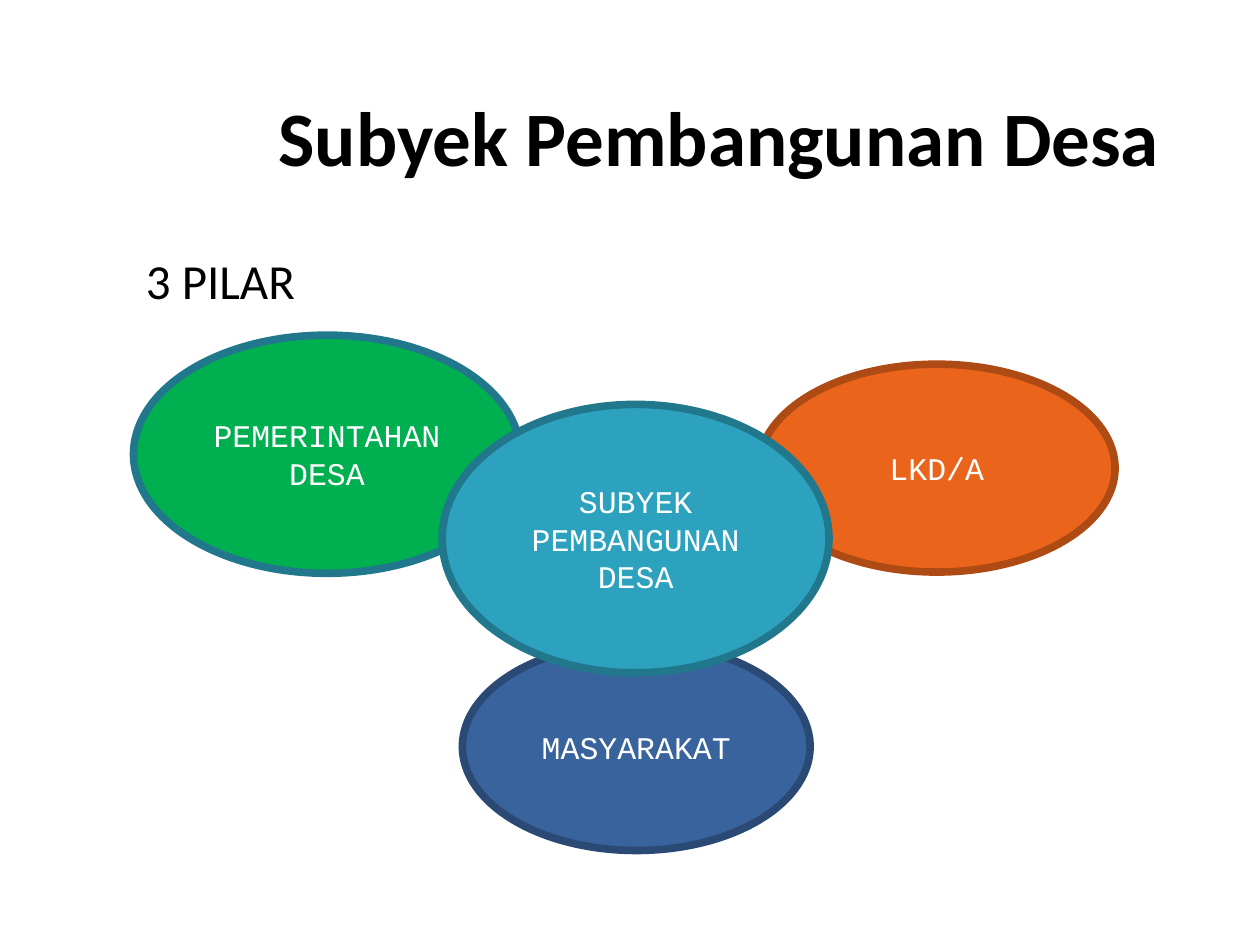
from pptx import Presentation
from pptx.dml.color import RGBColor
from pptx.enum.shapes import MSO_SHAPE
from pptx.enum.text import MSO_ANCHOR, MSO_AUTO_SIZE, PP_ALIGN
from pptx.util import Inches, Pt

OVAL = MSO_SHAPE.OVAL
MIDDLE, TOP = MSO_ANCHOR.MIDDLE, MSO_ANCHOR.TOP
LEFT, CENTER, RIGHT = PP_ALIGN.LEFT, PP_ALIGN.CENTER, PP_ALIGN.RIGHT

BLACK = RGBColor(0x00, 0x00, 0x00)
WHITE = RGBColor(0xFF, 0xFF, 0xFF)
GREEN = RGBColor(0x00, 0xB0, 0x50)
ORANGE = RGBColor(0xEB, 0x64, 0x1B)
RUST = RGBColor(0xAE, 0x4A, 0x14)
BLUE = RGBColor(0x39, 0x63, 0x9D)
NAVY = RGBColor(0x2A, 0x49, 0x74)
TEAL = RGBColor(0x2D, 0xA2, 0xBF)
DEEP = RGBColor(0x21, 0x78, 0x8D)

# Text, box, fill, line; the center comes last to lie on top
OVALS = [
    ("PEMERINTAHAN DESA", (1.06, 2.66, 3.07, 1.89), GREEN, DEEP),
    ("LKD/A", (6.02, 2.89, 2.83, 1.65), ORANGE, RUST),
    ("MASYARAKAT", (3.67, 5.1, 2.76, 1.65), BLUE, NAVY),
    ("SUBYEK PEMBANGUNAN DESA", (3.51, 3.21, 3.07, 2.13), TEAL, DEEP),
]


def write(shape, text, size, font="Calibri", color=BLACK, bold=False,
          align=LEFT, anchor=MIDDLE, spacing=None):
    frame = shape.text_frame
    frame.word_wrap = True
    frame.vertical_anchor = anchor
    para = frame.paragraphs[0]
    para.alignment = align
    if spacing:
        para.line_spacing = spacing
    run = para.add_run()
    run.text = text
    run.font.name = font
    run.font.size = Pt(size)
    run.font.bold = bold
    run.font.color.rgb = color


def add_title(slide, text, box):
    title = slide.shapes.title
    title.left, title.top, title.width, title.height = map(Inches, box)
    write(title, text, 44, bold=True, align=RIGHT, spacing=0.9)
    title.text_frame.auto_size = MSO_AUTO_SIZE.NONE


def add_label(slide, text, box):
    label = slide.shapes.add_textbox(*map(Inches, box))
    write(label, text, 28, anchor=TOP)
    label.text_frame.auto_size = MSO_AUTO_SIZE.SHAPE_TO_FIT_TEXT


def add_oval(slide, text, box, fill, line):
    oval = slide.shapes.add_shape(OVAL, *map(Inches, box))
    oval.shadow.inherit = False
    oval.fill.solid()
    oval.fill.fore_color.rgb = fill
    oval.line.color.rgb = line
    oval.line.width = Pt(4.33)
    write(oval, text, 18, font="Courier New", color=WHITE, align=CENTER)


def main():
    deck = Presentation()
    deck.slide_width, deck.slide_height = Inches(10), Inches(7.5)
    slide = deck.slides.add_slide(deck.slide_layouts[5])
    add_title(slide, "Subyek Pembangunan Desa", (0.69, 0.4, 8.62, 1.45))
    for item in OVALS:
        add_oval(slide, *item)
    add_label(slide, "3 PILAR", (1.06, 1.94, 3.31, 0.57))
    deck.save("out.pptx")


if __name__ == "__main__":
    main()
